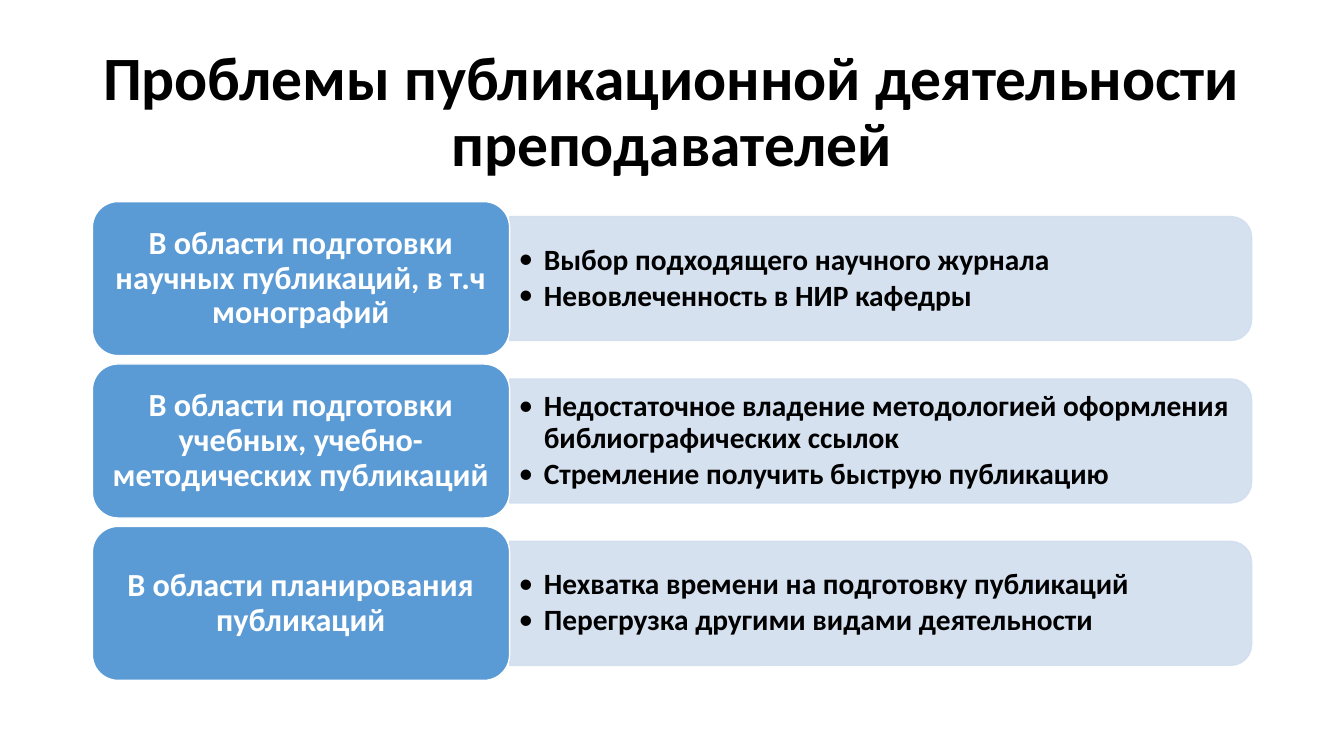
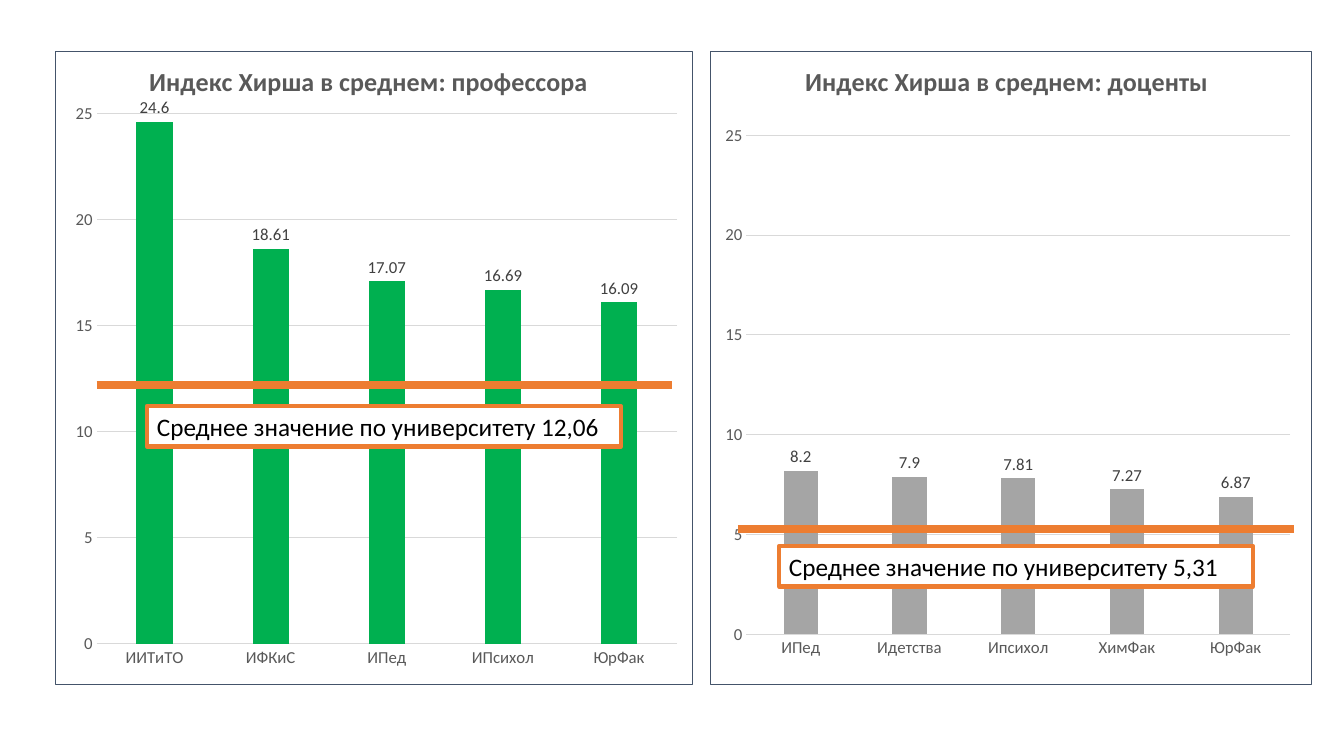
from lxml import etree
from pptx import Presentation
from pptx import util as u
from pptx.chart.data import CategoryChartData
from pptx.dml.color import RGBColor
from pptx.enum import chart as ch, shapes, text
from pptx.oxml import parse_xml
from pptx.oxml.ns import nsdecls, qn

Pt = u.Pt


class Theme:
    font = "Calibri"
    black, white = RGBColor(0, 0, 0), RGBColor(255, 255, 255)
    blue, pale = RGBColor(0x5B, 0x9B, 0xD5), RGBColor(0xD2, 0xDE, 0xEF)
    green, gray = RGBColor(0, 0xB0, 0x50), RGBColor(0xA5, 0xA5, 0xA5)
    orange = RGBColor(0xED, 0x7D, 0x31)
    grid, axis = RGBColor(0xD9, 0xD9, 0xD9), RGBColor(0x59, 0x59, 0x59)
    label, border = RGBColor(0x40, 0x40, 0x40), "44546A"
    title, block, bullet, chart_title, note, tick = 44, 23, 21, 18.6, 18, 12


def style(font, size, color, bold=False):
    font.name, font.size, font.bold = Theme.font, Pt(size), bold
    font.color.rgb = color


def add_box(s, kind, at, fill, line, width):
    sp = s.shapes.add_shape(kind, *map(Pt, at))
    sp.shadow.inherit = False
    sp.fill.solid()
    sp.fill.fore_color.rgb = fill
    sp.line.color.rgb = line
    sp.line.width = Pt(width)
    sp.text_frame.word_wrap = True
    return sp


prs = Presentation()
prs.slide_width, prs.slide_height = Pt(960), Pt(540)

# Slide 1: problem areas
s = prs.slides.add_slide(prs.slide_layouts[5])
title = s.shapes.title
title.left, title.top, title.width, title.height = map(Pt, (66, 28.8, 828, 104.4))
tf = title.text_frame
tf.word_wrap, tf.auto_size = True, text.MSO_AUTO_SIZE.NONE
tf.vertical_anchor = text.MSO_ANCHOR.MIDDLE
p = tf.paragraphs[0]
p.alignment, p.line_spacing = text.PP_ALIGN.CENTER, 0.9
r = p.add_run()
r.text = "Проблемы публикационной деятельности преподавателей"
style(r.font, Theme.title, Theme.black, True)

areas = [
    ("В области подготовки научных публикаций, в т.ч монографий",
     ["Выбор подходящего научного журнала", "Невовлеченность в НИР кафедры"]),
    ("В области подготовки учебных, учебно-методических публикаций",
     ["Недостаточное владение методологией оформления библиографических ссылок",
      "Стремление получить быструю публикацию"]),
    ("В области планирования публикаций",
     ["Нехватка времени на подготовку публикаций",
      "Перегрузка другими видами деятельности"]),
]
left, block_w, block_h, pitch = 66, 298, 110, 116
band_x, band_w, band_h = left + block_w, 530, 88.5

for i, (area, problems) in enumerate(areas):
    top = 144 + i * pitch
    middle = top + block_h / 2

    # Band, turned so that its rounded corners are on the right
    band = add_box(s, shapes.MSO_SHAPE.ROUND_2_SAME_RECTANGLE,
                   (band_x + (band_w - band_h) / 2, middle - band_w / 2, band_h, band_w),
                   Theme.pale, Theme.pale, 1)
    band.rotation = 90
    for color in band._element.spPr.iter(qn("a:srgbClr")):
        etree.SubElement(color, qn("a:alpha"), val="90000")

    # Bulleted problems
    tf = s.shapes.add_textbox(*map(Pt, (band_x, middle - 40, 525.6, 80))).text_frame
    tf.word_wrap, tf.vertical_anchor = True, text.MSO_ANCHOR.MIDDLE
    tf.margin_left = tf.margin_right = Pt(6.5)
    tf.margin_top = tf.margin_bottom = Pt(3)
    for j, problem in enumerate(problems):
        p = tf.add_paragraph() if j else tf.paragraphs[0]
        p.line_spacing, p.space_after = 0.9, Pt(3)
        pPr = p._p.get_or_add_pPr()
        pPr.set("marL", str(Pt(18)))
        pPr.set("indent", str(Pt(-18)))
        etree.SubElement(pPr, qn("a:buFont"), typeface=Theme.font)
        etree.SubElement(pPr, qn("a:buChar"), char="•")
        r = p.add_run()
        r.text = problem
        style(r.font, Theme.bullet, Theme.black, True)

    # Area block
    block = add_box(s, shapes.MSO_SHAPE.ROUNDED_RECTANGLE,
                    (left, top, block_w, block_h), Theme.blue, Theme.white, 1)
    tf = block.text_frame
    tf.vertical_anchor = text.MSO_ANCHOR.MIDDLE
    p = tf.paragraphs[0]
    p.alignment, p.line_spacing = text.PP_ALIGN.CENTER, 0.9
    r = p.add_run()
    r.text = area
    style(r.font, Theme.block, Theme.white, True)

# Slide 2: two charts, each with the university average
s = prs.slides.add_slide(prs.slide_layouts[6])
panels = [
    dict(title="Индекс Хирша в среднем: профессора", color=Theme.green,
         cats=["ИИТиТО", "ИФКиС", "ИПед", "ИПсихол", "ЮрФак"],
         vals=[24.6, 18.61, 17.07, 16.69, 16.09],
         x=39, w=456, title_x=0.14, plot=(0.065, 0.097, 0.911, 0.839),
         line=(69, 480, 275), note=(105, 290), average="12,06"),
    dict(title="Индекс Хирша в среднем: доценты", color=Theme.gray,
         cats=["ИПед", "Идетства", "Ипсихол", "ХимФак", "ЮрФак"],
         vals=[8.2, 7.9, 7.81, 7.27, 6.87],
         x=507, w=430, title_x=0.15, plot=(0.06, 0.132, 0.905, 0.789),
         line=(527, 924.5, 378), note=(556.5, 390), average="5,31"),
]
title_y = 0.01  # clear of the tallest column's label
for panel in panels:
    data = CategoryChartData()
    data.categories = panel["cats"]
    data.add_series("Series 1", panel["vals"])
    chart = s.shapes.add_chart(ch.XL_CHART_TYPE.COLUMN_CLUSTERED,
                               *map(Pt, (panel["x"], 36.7, panel["w"], 452.4)), data).chart
    style(chart.font, Theme.tick, Theme.axis)
    chart.has_legend = False

    # Chart title
    chart.has_title = True
    r = chart.chart_title.text_frame.paragraphs[0].add_run()
    r.text = panel["title"]
    style(r.font, Theme.chart_title, Theme.axis, True)

    # Columns and labels
    plot = chart.plots[0]
    plot.gap_width, plot.overlap, plot.vary_by_categories = 219, -27, False
    fill = plot.series[0].format.fill
    fill.solid()
    fill.fore_color.rgb = panel["color"]
    plot.has_data_labels = True
    labels = plot.data_labels
    labels.show_value, labels.position = True, ch.XL_LABEL_POSITION.OUTSIDE_END
    style(labels.font, Theme.tick, Theme.label)

    # Axes
    cat, val = chart.category_axis, chart.value_axis
    for axis in (cat, val):
        axis.major_tick_mark = axis.minor_tick_mark = ch.XL_TICK_MARK.NONE
        style(axis.tick_labels.font, Theme.tick, Theme.axis)
    val.minimum_scale, val.maximum_scale, val.major_unit = 0, 25, 5
    val.format.line.fill.background()
    for line in (cat.format.line, val.major_gridlines.format.line):
        line.color.rgb = Theme.grid
        line.width = Pt(0.75)

    # Places of the title and plot area, and the frame
    root = chart._chartSpace
    title_xml, plot_xml = root.find(".//" + qn("c:title")), root.find(".//" + qn("c:plotArea"))
    for parent, index, target, place in ((title_xml, 1, "", (panel["title_x"], title_y)),
                                         (plot_xml, 0, "inner", panel["plot"])):
        for old in parent.findall(qn("c:layout")):
            parent.remove(old)
        layout = etree.Element(qn("c:layout"))
        manual = etree.SubElement(layout, qn("c:manualLayout"))
        if target:
            etree.SubElement(manual, qn("c:layoutTarget"), val=target)
        for mode in ("xMode", "yMode"):
            etree.SubElement(manual, qn("c:" + mode), val="edge")
        for name, value in zip("xywh", place):
            etree.SubElement(manual, qn("c:" + name), val=str(value))
        parent.insert(index, layout)
    root.find(qn("c:chart")).addnext(parse_xml(
        f'<c:spPr {nsdecls("c", "a")}><a:noFill/><a:ln w="{Pt(0.75)}"><a:solidFill>'
        f'<a:srgbClr val="{Theme.border}"/></a:solidFill></a:ln></c:spPr>'))

# Average lines and notes
for panel in panels:
    x1, x2, y = panel["line"]
    line = s.shapes.add_connector(shapes.MSO_CONNECTOR.STRAIGHT, Pt(x1), Pt(y), Pt(x2), Pt(y))
    line.line.color.rgb = Theme.orange
    line.line.width = Pt(6)
    etree.SubElement(line._element.spPr, qn("a:effectLst"))

    note = add_box(s, shapes.MSO_SHAPE.RECTANGLE, (*panel["note"], 338.5, 29),
                   Theme.white, Theme.orange, 3)
    tf = note.text_frame
    tf.vertical_anchor = text.MSO_ANCHOR.TOP
    p = tf.paragraphs[0]
    p.alignment = text.PP_ALIGN.LEFT
    r = p.add_run()
    r.text = f"Среднее значение по университету {panel['average']}"
    style(r.font, Theme.note, Theme.black)

prs.save("out.pptx")
